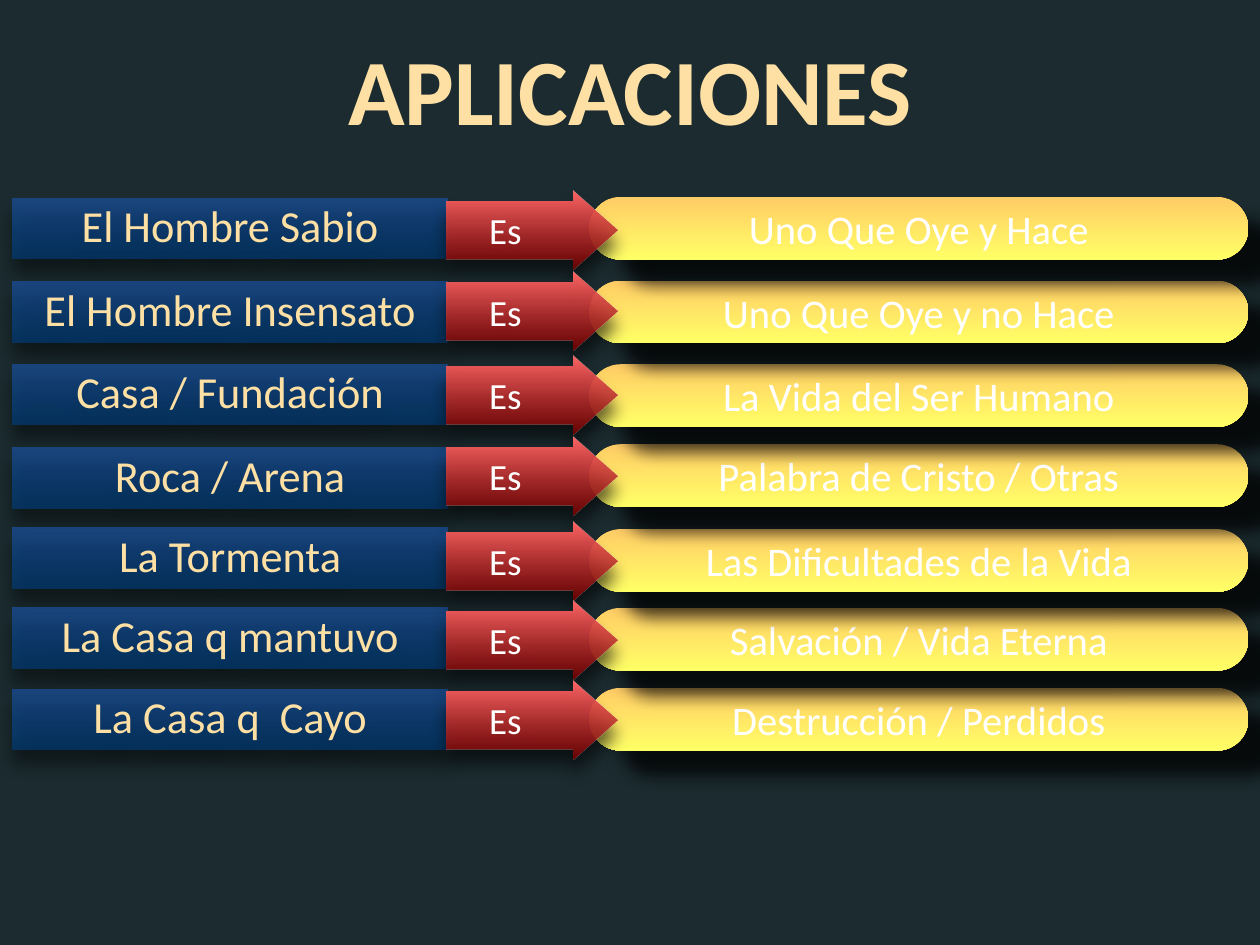
from lxml import etree
from pptx import Presentation
from pptx.dml.color import RGBColor
from pptx.enum.shapes import MSO_SHAPE
from pptx.enum.text import MSO_ANCHOR, MSO_AUTO_SIZE, PP_ALIGN
from pptx.oxml.ns import qn
from pptx.util import Pt

RECT = MSO_SHAPE.RECTANGLE
PILL = MSO_SHAPE.ROUNDED_RECTANGLE
ARROW = MSO_SHAPE.RIGHT_ARROW
TOP, MIDDLE = MSO_ANCHOR.TOP, MSO_ANCHOR.MIDDLE
CENTER = PP_ALIGN.CENTER
FIXED = MSO_AUTO_SIZE.NONE

FONT = "Calibri"
NIGHT = RGBColor(0x1B, 0x2B, 0x2F)
CREAM = RGBColor(0xFE, 0xE0, 0xA4)
WHITE = RGBColor(0xFF, 0xFF, 0xFF)
# Each fade: top colour and opacity, bottom colour and opacity (percent)
BLUE = ((RGBColor(0x1A, 0x4F, 0x99), 75), (RGBColor(0x00, 0x40, 0x80), 64))
GOLD = ((RGBColor(0xFF, 0xCC, 0x66), 100), (RGBColor(0xFF, 0xFF, 0x66), 100))
RED = ((RGBColor(0xFF, 0x66, 0x66), 100), (RGBColor(0x80, 0x00, 0x00), 79))
# Each shadow: opacity (percent), blur and distance (points), angle
NEAR = (68, 14, 12, 90)
FAR = (75, 14, 32, 38)

# Image, its top, meaning, its top, arrow top
ROWS = [
    ("El Hombre Sabio", 161.3, "Uno Que Oye y Hace", 160, 154.8),
    ("El Hombre Insensato", 229, "Uno Que Oye y no Hace", 228, 221),
    ("Casa / Fundación", 296, "La Vida del Ser Humano", 296, 288.8),
    ("Roca / Arena", 364, "Palabra de Cristo / Otras", 361, 354.8),
    ("La Tormenta", 429, "Las Dificultades de la Vida", 430, 424),
    ("La Casa q mantuvo", 494, "Salvación / Vida Eterna", 494, 488),
    ("La Casa q  Cayo", 560, "Destrucción / Perdidos", 559, 553),
]


def set_text(shape, text, size, color, anchor=MIDDLE, bold=False, right=0):
    frame = shape.text_frame
    frame.text = text
    frame.word_wrap = True
    frame.auto_size = FIXED
    frame.vertical_anchor = anchor
    frame.margin_left = frame.margin_top = frame.margin_bottom = 0
    frame.margin_right = Pt(right)
    line = frame.paragraphs[0]
    line.alignment = CENTER
    font = line.font
    font.name, font.size, font.bold = FONT, Pt(size), bold
    font.color.rgb = color


def set_fade(shape, fade):
    shape.fill.gradient()
    shape.fill.gradient_angle = 270
    for stop, (color, _) in zip(shape.fill.gradient_stops, fade):
        stop.color.rgb = color
    tints = shape.element.spPr.iter(qn("a:srgbClr"))
    for tint, (_, alpha) in zip(tints, fade):
        if alpha < 100:
            etree.SubElement(tint, qn("a:alpha"), val=str(alpha * 1000))


def set_shadow(shape, shadow):
    alpha, blur, far, angle = shadow
    shape.shadow.inherit = False
    effects = shape.element.spPr.find(qn("a:effectLst"))
    outer = etree.SubElement(
        effects, qn("a:outerShdw"), blurRad=str(Pt(blur)), dist=str(Pt(far)),
        dir=str(angle * 60000), algn="ctr", rotWithShape="0")
    tint = etree.SubElement(outer, qn("a:srgbClr"), val="000000")
    etree.SubElement(tint, qn("a:alpha"), val=str(alpha * 1000))


def add_block(slide, kind, box, fade, shadow, adjust=()):
    shape = slide.shapes.add_shape(kind, *map(Pt, box))
    for i, value in enumerate(adjust):
        shape.adjustments[i] = value
    set_fade(shape, fade)
    shape.line.fill.background()
    set_shadow(shape, shadow)
    return shape


def add_label(slide, text, top):
    shape = add_block(slide, RECT, (10.5, top, 353, 49), BLUE, NEAR)
    set_text(shape, text, 36, CREAM, anchor=TOP)


def add_pill(slide, text, top):
    shape = add_block(slide, PILL, (479, top, 535.5, 51), GOLD, FAR, [0.5])
    set_text(shape, text, 33, WHITE)


def add_arrow(slide, top):
    shape = add_block(slide, ARROW, (363, top, 139, 64), RED, NEAR,
                      [0.73, 0.57])
    set_text(shape, "Es", 30, WHITE, right=17)


def add_title(slide, text):
    title = slide.shapes.title
    title.left, title.top, title.width, title.height = map(
        Pt, (8, 26.5, 1008, 91))
    set_text(title, text, 76, CREAM, bold=True)


def main():
    deck = Presentation()
    deck.slide_width, deck.slide_height = Pt(1024), Pt(768)
    slide = deck.slides.add_slide(deck.slide_layouts[5])
    slide.background.fill.solid()
    slide.background.fill.fore_color.rgb = NIGHT
    add_title(slide, "APLICACIONES")
    for image, top, *_ in ROWS:
        add_label(slide, image, top)
    # Bottom row first, so that each shadow falls on the pill below it
    for _, _, sense, top, _ in reversed(ROWS):
        add_pill(slide, sense, top)
    for *_, top in ROWS:
        add_arrow(slide, top)
    deck.save("out.pptx")


if __name__ == "__main__":
    main()
